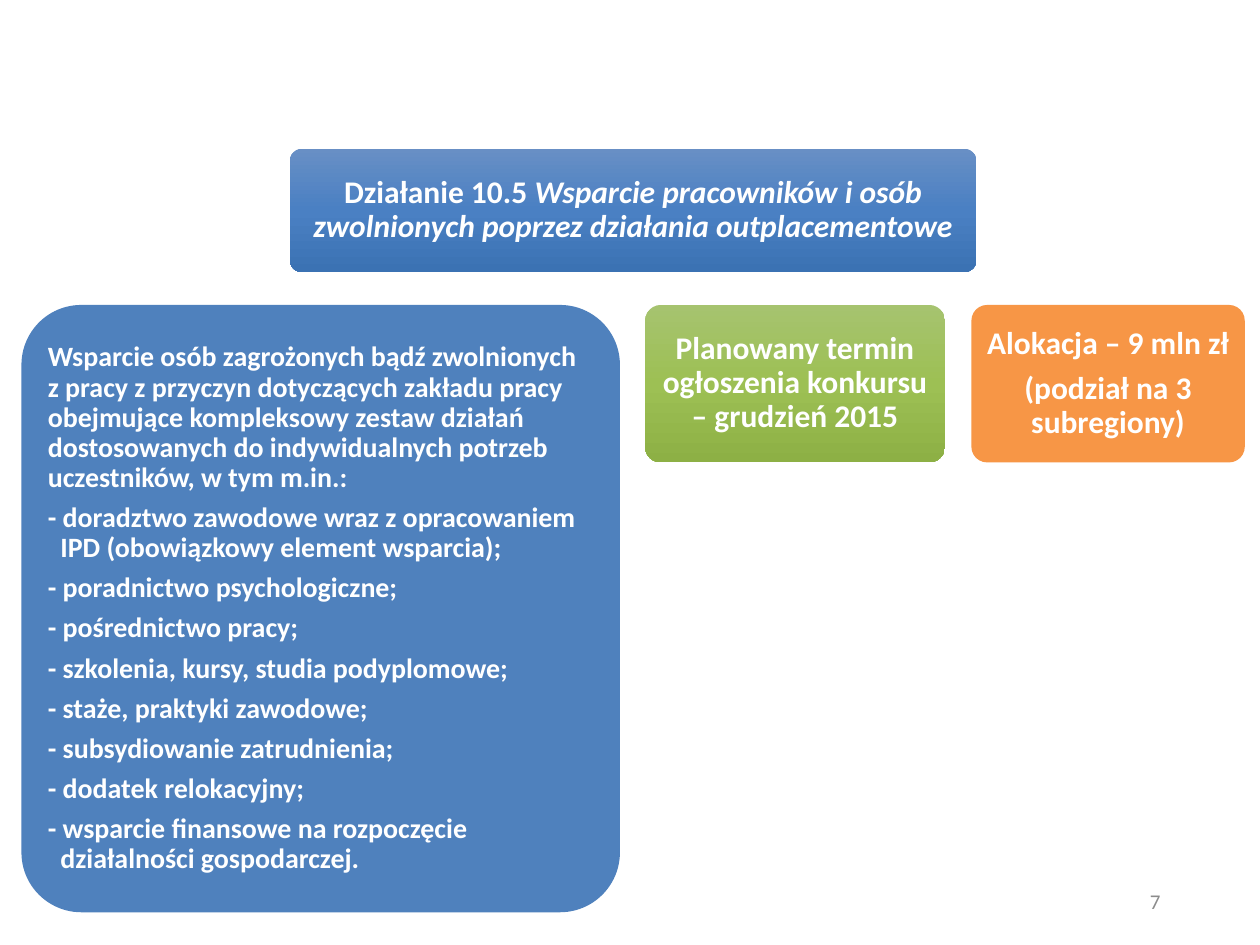
from copy import deepcopy
from lxml.etree import SubElement
from pptx import Presentation
from pptx.dml.color import RGBColor
from pptx.enum.shapes import MSO_SHAPE
from pptx.enum.text import MSO_ANCHOR, MSO_AUTO_SIZE, PP_ALIGN
from pptx.oxml.ns import qn
from pptx.util import Inches, Pt

WHITE = RGBColor(0xFF, 0xFF, 0xFF)
GRAY = RGBColor(0x8C, 0x8C, 0x8C)
BLUE = RGBColor(0x4F, 0x81, 0xBD)
ORANGE = RGBColor(0xF7, 0x96, 0x46)
BLUES = (RGBColor(0x68, 0x8F, 0xC5), RGBColor(0x4A, 0x80, 0xC3), RGBColor(0x3B, 0x72, 0xB3))
GREENS = (RGBColor(0xA6, 0xC3, 0x6F), RGBColor(0x9D, 0xC0, 0x54), RGBColor(0x8D, 0xB0, 0x45))

FONT = "Calibri"
INSET = 0.07
HANG = 0.1
ROW = 2.42

HEAD = "Działanie 10.5 "
NAME = "Wsparcie pracowników i osób zwolnionych poprzez działania outplacementowe"
SCOPE = (
    "Wsparcie osób zagrożonych bądź zwolnionych z pracy z przyczyn dotyczących "
    "zakładu pracy obejmujące kompleksowy zestaw działań dostosowanych do "
    "indywidualnych potrzeb uczestników, w tym m.in.:"
)
ITEMS = [
    "- doradztwo zawodowe wraz z opracowaniem IPD (obowiązkowy element wsparcia);",
    "- poradnictwo psychologiczne;",
    "- pośrednictwo pracy;",
    "- szkolenia, kursy, studia podyplomowe;",
    "- staże, praktyki zawodowe;",
    "- subsydiowanie zatrudnienia;",
    "- dodatek relokacyjny;",
    "- wsparcie finansowe na rozpoczęcie działalności gospodarczej.",
]
TERM = "Planowany termin ogłoszenia konkursu – grudzień 2015"
FUNDS = "Alokacja – 9 mln zł\n(podział na 3 subregiony)"


def shade(card, tones):
    card.fill.gradient()
    card.fill.gradient_angle = 270
    stops = card._element.spPr.find(qn("a:gradFill")).find(qn("a:gsLst"))
    stops.insert(1, deepcopy(stops[0]))
    for num, (stop, tone) in enumerate(zip(card.fill.gradient_stops, tones)):
        stop.position = num / 2
        stop.color.rgb = tone


def add_card(slide, at, paint):
    card = slide.shapes.add_shape(MSO_SHAPE.ROUNDED_RECTANGLE, *map(Inches, at))
    card.adjustments[0] = 0.1
    card.shadow.inherit = False
    card.line.fill.background()
    if isinstance(paint, RGBColor):
        card.fill.solid()
        card.fill.fore_color.rgb = paint
    else:
        shade(card, paint)
    return card


def place(slide, holder, at):
    holder.left, holder.top, holder.width, holder.height = map(Inches, at)
    slide.shapes._spTree.append(holder._element)


def set_frame(frame, inset):
    frame.word_wrap = True
    frame.auto_size = MSO_AUTO_SIZE.NONE
    frame.vertical_anchor = MSO_ANCHOR.MIDDLE
    frame.margin_left = frame.margin_right = Inches(inset)
    frame.margin_top = frame.margin_bottom = Inches(inset)


def style_text(frame, size, align=PP_ALIGN.CENTER):
    set_frame(frame, INSET)
    for para in frame.paragraphs:
        para.alignment = align
        para.line_spacing = 0.9
        para.space_before = Pt(0)
        para.space_after = Pt(size * 0.35)
        for run in para.runs:
            run.font.name = FONT
            run.font.size = Pt(size)
            run.font.bold = True
            run.font.color.rgb = WHITE


def add_title(slide):
    add_card(slide, (2.3, 1.18, 5.45, 0.98), BLUES)
    title = slide.shapes.title
    place(slide, title, (2.33, 1.21, 5.39, 0.92))
    frame = title.text_frame
    frame.text = HEAD
    run = frame.paragraphs[0].add_run()
    run.text = NAME
    run.font.italic = True
    style_text(frame, 18)


def add_list(slide):
    add_card(slide, (0.17, ROW, 4.75, 4.82), BLUE)
    body = slide.placeholders[1]
    place(slide, body, (0.31, 2.56, 4.47, 4.54))
    frame = body.text_frame
    frame.text = "\n".join([SCOPE, *ITEMS])
    for num, para in enumerate(frame.paragraphs):
        hang = Inches(HANG) if num else 0
        props = para._p.get_or_add_pPr()
        props.set("marL", str(hang))
        props.set("indent", str(-hang))
        SubElement(props, qn("a:buNone"))
    style_text(frame, 16, PP_ALIGN.LEFT)


def add_note(slide, at, paint, text):
    frame = add_card(slide, at, paint).text_frame
    frame.text = text
    style_text(frame, 18)


def add_page(slide, text):
    box = slide.shapes.add_textbox(*map(Inches, (7.06, 6.95, 2.25, 0.4)))
    frame = box.text_frame
    frame.text = text
    set_frame(frame, 0.1)
    para = frame.paragraphs[0]
    para.alignment = PP_ALIGN.RIGHT
    font = para.runs[0].font
    font.name = FONT
    font.size = Pt(12)
    font.color.rgb = GRAY


def main():
    deck = Presentation()
    deck.slide_width, deck.slide_height = Inches(10), Inches(7.5)
    slide = deck.slides.add_slide(deck.slide_layouts[1])
    add_page(slide, "7")
    add_title(slide)
    add_list(slide)
    add_note(slide, (5.12, ROW, 2.38, 1.25), GREENS, TERM)
    add_note(slide, (7.71, ROW, 2.17, 1.25), ORANGE, FUNDS)
    deck.save("out.pptx")


if __name__ == "__main__":
    main()
